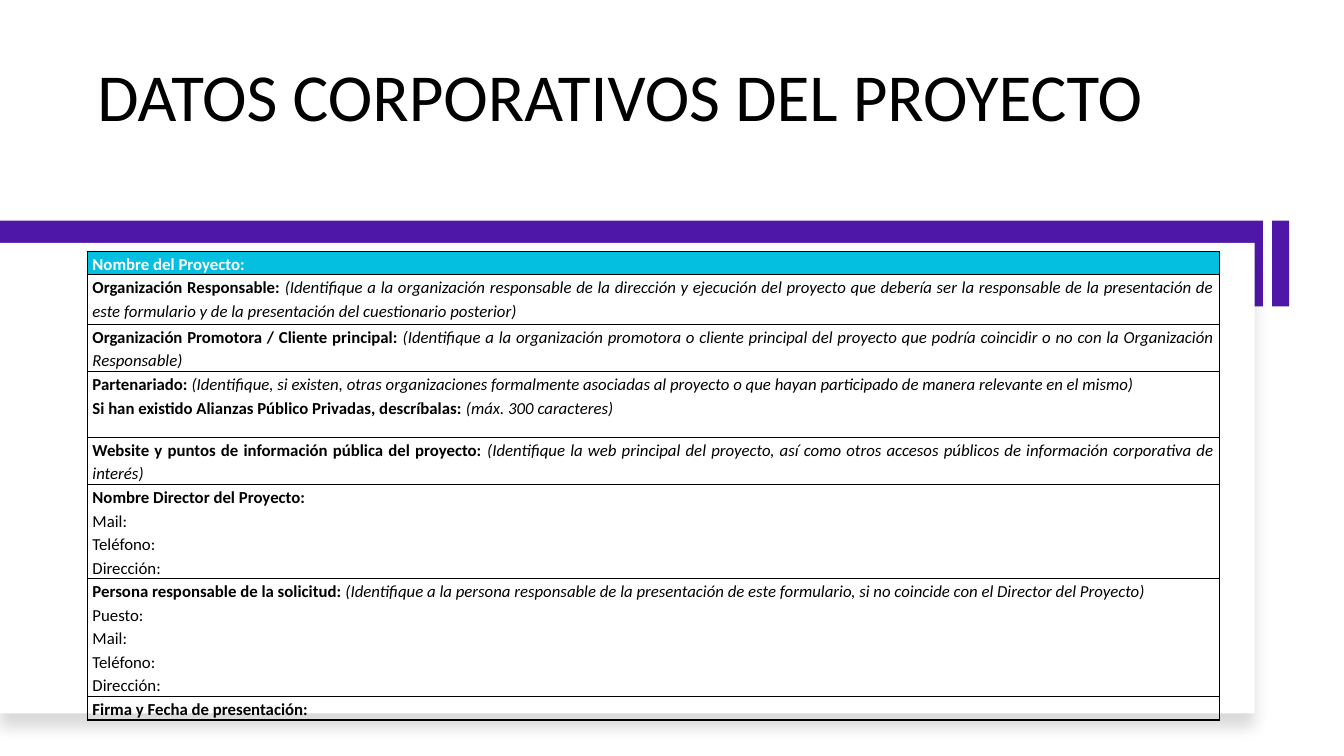
from lxml import etree
from pptx import Presentation
from pptx import util as u
from pptx.dml.color import RGBColor
from pptx.enum import shapes, text
from pptx.oxml import parse_xml
from pptx.oxml.ns import nsdecls

BLACK = RGBColor(0x00, 0x00, 0x00)
WHITE = RGBColor(0xFF, 0xFF, 0xFF)
PURPLE = RGBColor(0x4F, 0x17, 0xA8)
CYAN = RGBColor(0x05, 0xBF, 0xE0)
FONT = "Calibri"
BOLD, ITALIC, PLAIN = {"bold": True}, {"italic": True}, {}


def add_run(paragraph, words, size, color, style):
    run = paragraph.add_run()
    run.text = words
    values = {"name": FONT, "size": u.Pt(size), **style}
    for name, value in values.items():
        setattr(run.font, name, value)
    run.font.color.rgb = color


def add_borders(cell):
    properties = cell._tc.get_or_add_tcPr()
    for side in ("lnL", "lnR", "lnT", "lnB"):
        properties.append(parse_xml(
            f'<a:{side} {nsdecls("a")} w="12700"><a:solidFill>'
            f'<a:srgbClr val="{BLACK}"/></a:solidFill></a:{side}>'))


presentation = Presentation()
presentation.slide_width = u.Cm(33.87)
presentation.slide_height = u.Cm(19.05)
slide = presentation.slides.add_slide(presentation.slide_layouts[5])

# Title
title = slide.shapes.title
title.left, title.top, title.width, title.height = (
    u.Cm(2.2), u.Cm(1.4), u.Cm(28.15), u.Cm(2.15))
title.text_frame.vertical_anchor = text.MSO_ANCHOR.BOTTOM
title.text_frame.word_wrap = True
heading = title.text_frame.paragraphs[0]
heading.alignment = text.PP_ALIGN.LEFT
heading.line_spacing = 0.9
add_run(heading, "DATOS CORPORATIVOS DEL PROYECTO", 48, BLACK, PLAIN)

# Purple bands and the white panel with its soft shadow
bands = [
    (0, 5.56, 31.83, 2.16, PURPLE),
    (0, 6.12, 31.62, 11.86, WHITE),
    (32.06, 5.56, 0.43, 2.16, PURPLE),
]
for left, top, width, height, color in bands:
    band = slide.shapes.add_shape(shapes.MSO_SHAPE.RECTANGLE, u.Cm(left), u.Cm(top),
                                  u.Cm(width), u.Cm(height))
    band.shadow.inherit = False
    band.fill.solid()
    band.fill.fore_color.rgb = color
    band.line.fill.background()
    if color == WHITE:
        effects = band._element.spPr.find("{*}effectLst")
        effects.append(etree.fromstring(
            f'<a:outerShdw {nsdecls("a")} blurRad="139700" dist="127000" dir="5400000" '
            'algn="t" rotWithShape="0"><a:srgbClr val="000000">'
            '<a:alpha val="15000"/></a:srgbClr></a:outerShdw>'))

# Form: each row has a height and its paragraphs, each made of (words, style) runs
contact = [[(label, PLAIN)] for label in ("Mail:", "Teléfono:", "Dirección:")]
rows = [
    (0.53, [[("Nombre del Proyecto:", BOLD)]]),
    (1.25, [[("Organización Responsable: ", BOLD),
             ("(Identifique a la organización responsable de la dirección y ejecución del "
              "proyecto que debería ser la responsable de la presentación de este formulario "
              "y de la presentación del cuestionario posterior)", ITALIC)]]),
    (1.09, [[("Organización Promotora / Cliente principal: ", BOLD),
             ("(Identifique a la organización promotora o cliente principal del proyecto que "
              "podría coincidir o no con la Organización Responsable)", ITALIC)]]),
    (1.66, [[("Partenariado: ", BOLD),
             ("(Identifique, si existen, otras organizaciones formalmente asociadas al "
              "proyecto o que hayan participado de manera relevante en el mismo)", ITALIC)],
            [("Si han existido Alianzas Público Privadas, descríbalas: ", BOLD),
             ("(máx. 300 caracteres)", ITALIC)]]),
    (1.07, [[("Website y puntos de información pública del proyecto: ", BOLD),
             ("(Identifique la web principal del proyecto, así como otros accesos públicos "
              "de información corporativa de interés)", ITALIC)]]),
    (2.24, [[("Nombre Director del Proyecto:", BOLD)], *contact]),
    (2.87, [[("Persona responsable de la solicitud: ", BOLD),
             ("(Identifique a la persona responsable de la presentación de este formulario, "
              "si no coincide con el Director del Proyecto)", ITALIC)],
            [("Puesto:", PLAIN)], *contact]),
    (0.53, [[("Firma y Fecha de presentación:", BOLD)]]),
]
form = slide.shapes.add_table(len(rows), 1, u.Cm(2.2), u.Cm(6.33), u.Cm(28.53),
                              u.Cm(sum(height for height, _ in rows))).table
form.first_row = form.horz_banding = False
cell_format = {"margin_left": u.Cm(0.13), "margin_right": u.Cm(0.13),
               "margin_top": 0, "margin_bottom": 0}

for index, (height, paragraphs) in enumerate(rows):
    form.rows[index].height = u.Cm(height)
    cell = form.cell(index, 0)
    for name, value in cell_format.items():
        setattr(cell, name, value)
    add_borders(cell)
    if index == 0:
        cell.fill.solid()
        cell.fill.fore_color.rgb = CYAN
    else:
        cell.fill.background()
    for number, runs in enumerate(paragraphs):
        frame = cell.text_frame
        paragraph = frame.add_paragraph() if number else frame.paragraphs[0]
        paragraph.alignment = text.PP_ALIGN.JUSTIFY
        paragraph.line_spacing = 1.15
        for words, style in runs:
            add_run(paragraph, words, 12, BLACK if index else WHITE, style)

presentation.save("out.pptx")
